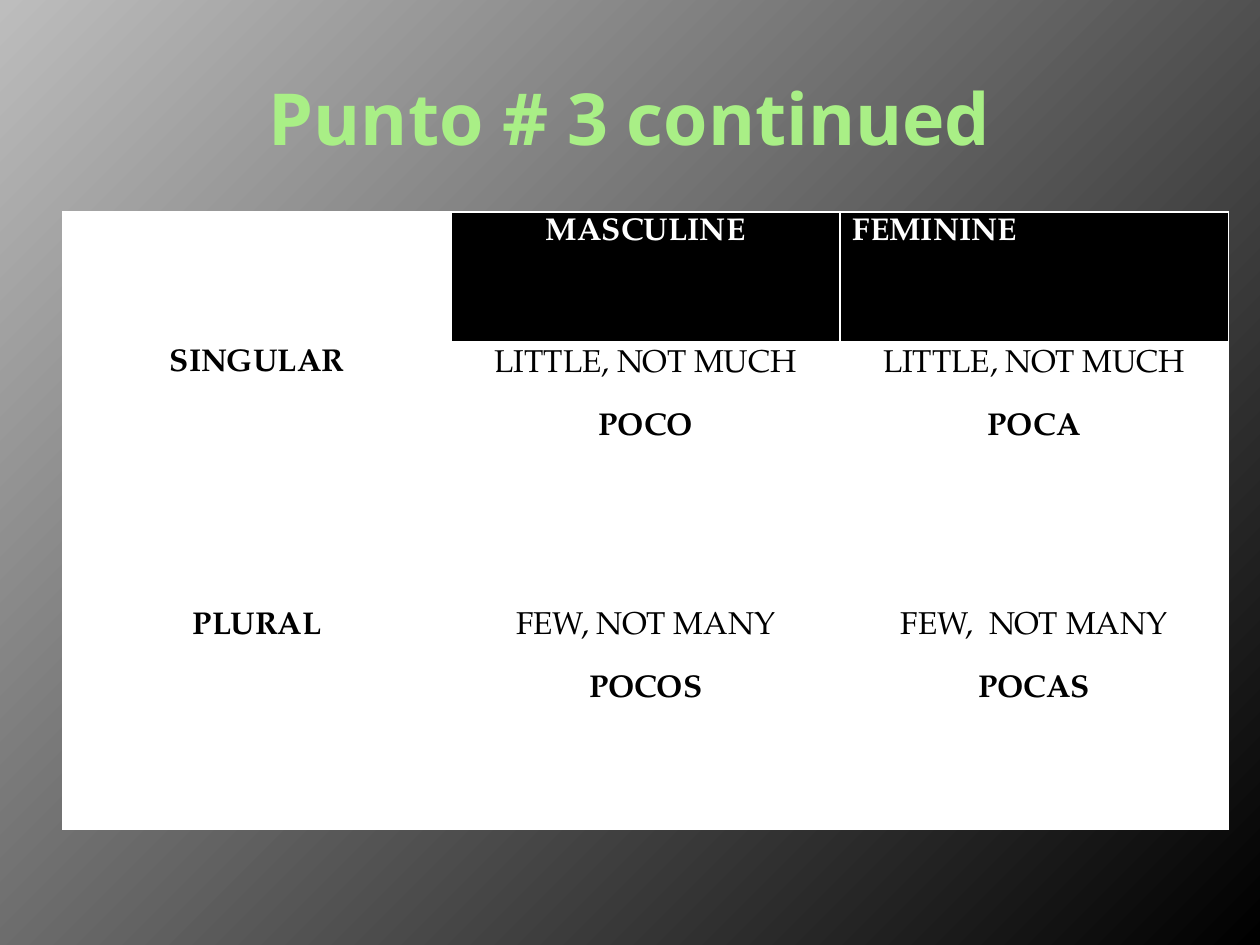
from dataclasses import dataclass

import pptx
import pptx.dml.color
import pptx.enum.text
import pptx.oxml
import pptx.oxml.ns
import pptx.util

Pt = pptx.util.Pt
Color = pptx.dml.color.RGBColor.from_string
ALIGN = pptx.enum.text.PP_ALIGN
ANCHOR = pptx.enum.text.MSO_ANCHOR


@dataclass(frozen=True)
class Theme:
    light: str = "BDBDBD"
    black: str = "000000"
    white: str = "FFFFFF"
    green: str = "A9EF86"
    title_font: str = "Noto Sans"
    table_font: str = "TeX Gyre Pagella"
    title_size: int = 41
    table_size: int = 18
    border: int = 1
    header_border: int = 3


THEME = Theme()
ROW_HEIGHTS = (75, 150, 128)
# Each cell is a list of (text, bold) paragraphs.
ROWS = (
    ([], [("MASCULINE", True)], [("FEMININE", True)]),
    ([("SINGULAR", True)],
     [("LITTLE, NOT MUCH", False), ("POCO", True)],
     [("LITTLE, NOT MUCH", False), ("POCA", True)]),
    ([("PLURAL", True)],
     [("FEW, NOT MANY", False), ("POCOS", True)],
     [("FEW,  NOT MANY", False), ("POCAS", True)]),
)


def format_font(font, color, **values):
    for name, value in values.items():
        setattr(font, name, value)
    font.fill.solid()
    font.fill.fore_color.rgb = Color(color)


def paint_background(slide):
    fill = slide.background.fill
    fill.gradient()
    fill.gradient_angle = 315
    for stop, color in zip(fill.gradient_stops, (THEME.light, THEME.black)):
        stop.color.rgb = Color(color)


def place_title(slide, text, left, top, width, height):
    title = slide.shapes.title
    box = {"left": left, "top": top, "width": width, "height": height}
    for name, value in box.items():
        setattr(title, name, Pt(value))
    frame = title.text_frame
    frame.vertical_anchor = ANCHOR.MIDDLE
    paragraph = frame.paragraphs[0]
    paragraph.alignment = ALIGN.CENTER
    run = paragraph.add_run()
    run.text = text
    format_font(run.font, THEME.green, name=THEME.title_font,
                size=Pt(THEME.title_size), bold=True)


def set_borders(cell, bottom_width):
    """Draw white lines on all sides; they must precede the cell's fill."""
    properties = cell._tc.get_or_add_tcPr()
    widths = {"lnL": THEME.border, "lnR": THEME.border,
              "lnT": THEME.border, "lnB": bottom_width}
    for position, (side, width) in enumerate(widths.items()):
        properties.insert(position, pptx.oxml.parse_xml(
            f'<a:{side} {pptx.oxml.ns.nsdecls("a")} w="{Pt(width)}"><a:solidFill>'
            f'<a:srgbClr val="{THEME.white}"/></a:solidFill></a:{side}>'))


def fill_cell(cell, content, fill, color, alignment):
    cell.fill.solid()
    cell.fill.fore_color.rgb = Color(fill)
    frame = cell.text_frame
    for index, (text, bold) in enumerate(content):
        paragraph = frame.add_paragraph() if index else frame.paragraphs[0]
        paragraph.alignment = alignment
        paragraph.space_before = Pt(THEME.table_size if index else 0)
        run = paragraph.add_run()
        run.text = text
        format_font(run.font, color, name=THEME.table_font,
                    size=Pt(THEME.table_size), bold=bold)


def place_table(slide, left, top, width):
    column_count = len(ROWS[0])
    table = slide.shapes.add_table(
        len(ROWS), column_count, Pt(left), Pt(top), Pt(width),
        Pt(sum(ROW_HEIGHTS))).table
    for column in table.columns:
        column.width = Pt(width / column_count)
    for row_index, (height, contents) in enumerate(zip(ROW_HEIGHTS, ROWS)):
        table.rows[row_index].height = Pt(height)
        for column_index, content in enumerate(contents):
            cell = table.cell(row_index, column_index)
            is_header = row_index == 0
            is_dark = is_header and column_index > 0
            is_left = is_header and column_index == column_count - 1
            fill_cell(cell, content,
                      THEME.black if is_dark else THEME.white,
                      THEME.white if is_dark else THEME.black,
                      ALIGN.LEFT if is_left else ALIGN.CENTER)
            set_borders(cell, THEME.header_border if is_header else THEME.border)


def main():
    presentation = pptx.Presentation()
    presentation.slide_width, presentation.slide_height = Pt(720), Pt(540)
    slide = presentation.slides.add_slide(presentation.slide_layouts[5])
    paint_background(slide)
    place_title(slide, "Punto # 3 continued", 36, 21.6, 648, 90)
    place_table(slide, 36, 121, 666)
    presentation.save("out.pptx")


if __name__ == "__main__":
    main()
